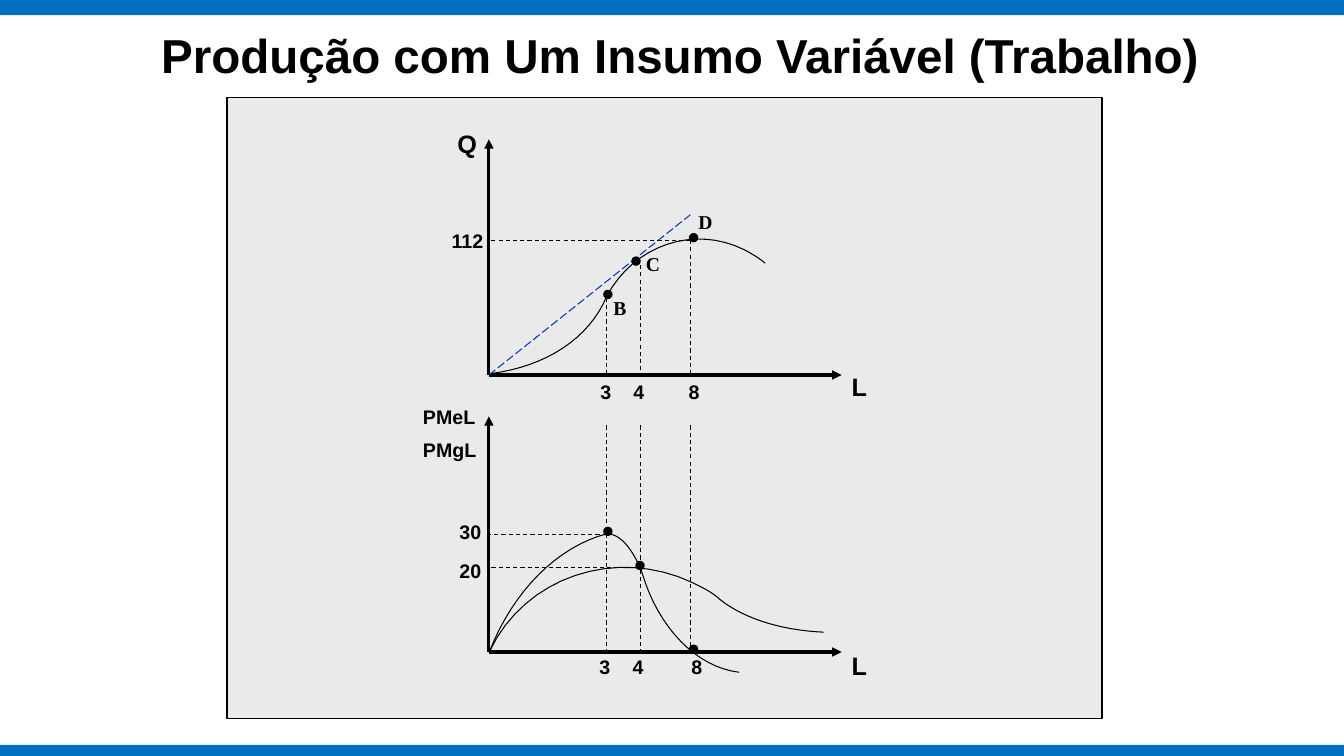
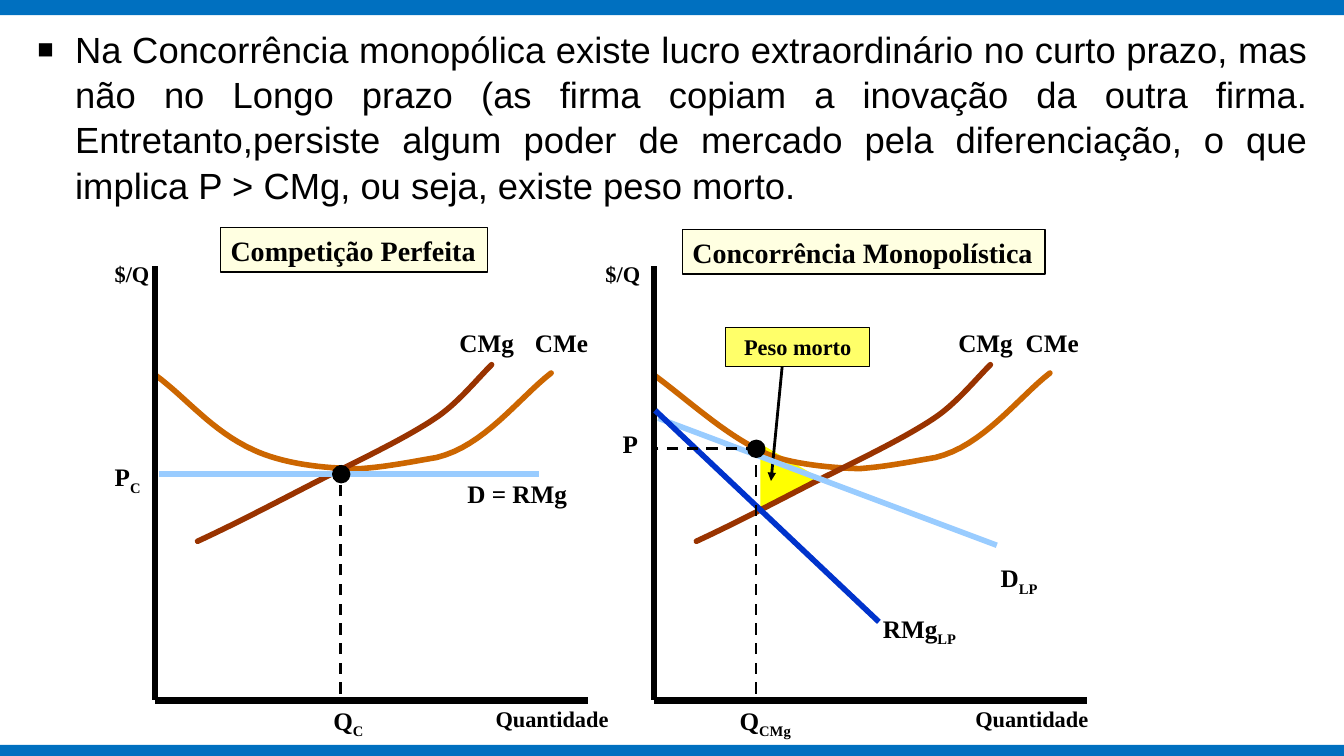
from dataclasses import dataclass
from typing import Optional

from lxml.etree import SubElement
from pptx import Presentation
from pptx.dml.color import RGBColor
from pptx.enum.dml import MSO_LINE
from pptx.enum.shapes import MSO_CONNECTOR, MSO_SHAPE
from pptx.enum.text import MSO_ANCHOR, MSO_AUTO_SIZE, PP_ALIGN
from pptx.oxml.ns import qn
from pptx.util import Cm, Pt

BLACK = RGBColor(0x00, 0x00, 0x00)
BAND_BLUE = RGBColor(0x00, 0x70, 0xC0)
PANEL_GREY = RGBColor(0xEA, 0xEA, 0xEA)
DEEP_BLUE = RGBColor(0x00, 0x33, 0xCC)
SKY_BLUE = RGBColor(0x99, 0xCC, 0xFF)
ORANGE = RGBColor(0xCC, 0x66, 0x00)
BROWN = RGBColor(0x99, 0x33, 0x00)
YELLOW = RGBColor(0xFF, 0xFF, 0x00)
NOTE_YELLOW = RGBColor(0xFF, 0xFF, 0x69)
CREAM = RGBColor(0xFF, 0xFF, 0xE1)
SANS, SERIF = "Arial", "Times New Roman"
WIDTH, HEIGHT = 33.87, 19.05

Point = tuple[float, float]
Area = tuple[float, float, float, float]

TOTAL_PRODUCT = [(12.32, 9.42), (13.77, 9.25), (14.86, 8.51), (15.29, 7.47), (15.98, 6.17),
                 (17.5, 5.66), (18.77, 6.3), (18.95, 6.4), (19.13, 6.5), (19.28, 6.63)]
MARGINAL_PRODUCT = [(12.34, 16.41), (12.95, 14.86), (14.07, 13.77), (15.3, 13.45), (15.62, 13.46),
                    (15.93, 13.79), (16.18, 14.43), (16.59, 15.82), (17.55, 16.81), (18.62, 16.94)]
AVERAGE_PRODUCT = [(12.34, 16.41), (13.23, 14.53), (15.52, 13.77), (17.45, 14.68), (17.65, 14.78),
                   (17.86, 14.88), (18.03, 15.01), (18.62, 15.54), (19.61, 15.88), (20.75, 15.93)]
MARGINAL_COST = [(1.07, 13.64), (2.18, 13.13), (3.45, 12.45), (4.32, 12.01), (5.23, 11.56),
                 (6.38, 11), (7.06, 10.54), (7.59, 10.19), (8.03, 9.65), (8.48, 9.19)]
AVERAGE_COST_END = [(5.18, 11.81), (5.87, 11.76), (6.5, 11.63), (7.09, 11.53),
                    (8.28, 11.25), (9.17, 10.03), (9.98, 9.4)]


@dataclass(frozen=True)
class Label:
    """A short text placed by its top left corner."""
    text: str
    left: float
    top: float
    width: float
    size: float = 18
    subscript: str = ""


@dataclass(frozen=True)
class Market:
    """One cost diagram, with curves measured from its vertical axis."""
    axis: float
    heading: str
    heading_area: Area
    cost_start: list[Point]
    average_left: float
    unit_left: float
    quantity_left: float


MARKETS = [
    Market(3.91, "Competição Perfeita", (5.56, 5.74, 6.73, 1.12),
           [(0.03, 9.47), (0.79, 10.03), (1.42, 10.85), (2.46, 11.33), (3.2, 11.68), (4.22, 11.81)],
           9.32, 2.64, 12.24),
    Market(16.48, "Concorrência Monopolística", (17.2, 5.79, 9.14, 1.12),
           [(0.03, 9.47), (0.79, 10.03), (1.8, 10.95), (2.67, 11.35), (3.2, 11.66), (4.34, 11.79)],
           9.12, 15.01, 24.33),
]


def write_text(para, text: str, *, size: float, font: str = SERIF, bold: bool = True,
               subscript: bool = False) -> None:
    """Add a formatted span to a paragraph."""
    span = para.add_run()
    span.text = text
    span.font.name = font
    span.font.size = Pt(size)
    span.font.bold = bold
    span.font.color.rgb = BLACK
    if subscript:
        span._r.get_or_add_rPr().set("baseline", "-25000")


def add_label(page, label: Label, *, font: str = SERIF, wrap: bool = False, align=PP_ALIGN.LEFT) -> None:
    """Place a label in a box as tall as its single line."""
    box = page.shapes.add_textbox(Cm(label.left), Cm(label.top), Cm(label.width),
                                  Pt(label.size * 1.2) + Cm(0.25))
    box.text_frame.word_wrap = wrap
    para = box.text_frame.paragraphs[0]
    para.alignment = align
    write_text(para, label.text, size=label.size, font=font)
    if label.subscript:
        write_text(para, label.subscript, size=label.size, font=font, subscript=True)


def add_box(page, area: Area, fill: RGBColor, *, kind=MSO_SHAPE.RECTANGLE,
            outline: Optional[float] = None):
    """Draw a filled preset shape with an optional black outline."""
    box = page.shapes.add_shape(kind, *(Cm(length) for length in area))
    box.shadow.inherit = False
    box.fill.solid()
    box.fill.fore_color.rgb = fill
    if outline is None:
        box.line.fill.background()
    else:
        box.line.color.rgb = BLACK
        box.line.width = Pt(outline)
    return box


def add_note(page, text: str, area: Area, fill: RGBColor, size: float, align=PP_ALIGN.LEFT) -> None:
    """Draw an outlined rectangle holding one line of text."""
    box = add_box(page, area, fill, outline=1)
    box.text_frame.word_wrap = False
    para = box.text_frame.paragraphs[0]
    para.alignment = align
    write_text(para, text, size=size)


def add_dot(page, center: Point, size: float, outline: float) -> None:
    """Draw a black dot around its centre."""
    x, y = center
    add_box(page, (x - size / 2, y - size / 2, size, size), BLACK, kind=MSO_SHAPE.OVAL, outline=outline)


def add_line(page, start: Point, end: Point, width: float, *, color: RGBColor = BLACK,
             dash=None, arrow: bool = False) -> None:
    """Draw a straight line, dashed or arrowed on request."""
    line = page.shapes.add_connector(MSO_CONNECTOR.STRAIGHT, *(Cm(length) for length in start + end))
    line.line.color.rgb = color
    line.line.width = Pt(width)
    if dash is not None:
        line.line.dash_style = dash
    properties = line.element.spPr
    if arrow:
        SubElement(properties.find(qn("a:ln")), qn("a:tailEnd"), type="triangle")
    SubElement(properties, qn("a:effectLst"))


def bezier_points(nodes: list[Point], steps: int = 16) -> list[Point]:
    """Sample a chain of cubic segments that share their end nodes."""
    points = [nodes[0]]
    for first in range(0, len(nodes) - 1, 3):
        segment = nodes[first:first + 4]
        for step in range(1, steps + 1):
            t = step / steps
            weights = ((1 - t) ** 3, 3 * t * (1 - t) ** 2, 3 * t * t * (1 - t), t ** 3)
            points.append((sum(w * x for w, (x, _) in zip(weights, segment)),
                           sum(w * y for w, (_, y) in zip(weights, segment))))
    return points


def add_curve(page, nodes: list[Point], width: float, *, color: RGBColor = BLACK,
              shift: float = 0) -> None:
    """Draw an open smooth curve through cubic nodes."""
    points = [(Cm(x + shift), Cm(y)) for x, y in bezier_points(nodes)]
    builder = page.shapes.build_freeform(*points[0])
    builder.add_line_segments(points[1:], close=False)
    curve = builder.convert_to_shape()
    curve.shadow.inherit = False
    curve.fill.background()
    curve.line.color.rgb = color
    curve.line.width = Pt(width)
    curve.element.spPr.find(qn("a:ln")).set("cap", "rnd")


def place(holder, area: Area) -> None:
    """Move a placeholder and keep its text at full size."""
    holder.left, holder.top, holder.width, holder.height = (Cm(length) for length in area)
    holder.text_frame.auto_size = MSO_AUTO_SIZE.NONE


def add_master_bands(deck, page) -> None:
    """Put the two blue bands on the slide master."""
    tree = deck.slide_master.element.cSld.spTree
    for top, height in ((0, 0.38), (18.77, 0.28)):
        tree.insert(2, add_box(page, (0, top, WIDTH, height), BAND_BLUE).element)


def draw_production(page) -> None:
    """Draw total product above average and marginal product."""
    title = page.shapes.title
    place(title, (2.11, 0.05, 28.37, 2.16))
    title.text_frame.vertical_anchor = MSO_ANCHOR.BOTTOM
    para = title.text_frame.paragraphs[0]
    para.alignment = PP_ALIGN.RIGHT
    write_text(para, "Produção com Um Insumo Variável (Trabalho)", size=34, font=SANS)

    add_box(page, (5.72, 2.46, 22.05, 15.65), PANEL_GREY, outline=1)
    axis, right = 12.32, 21.21
    for base in (9.45, 16.43):
        add_line(page, (axis, base), (axis, base - 5.94), 2.25, arrow=True)
        add_line(page, (axis, base), (right, base), 2.25, arrow=True)
    for nodes in (TOTAL_PRODUCT, MARGINAL_PRODUCT, AVERAGE_PRODUCT):
        add_curve(page, nodes, 0.75)
    add_line(page, (axis, 9.45), (17.4, 5.41), 0.75, color=DEEP_BLUE, dash=MSO_LINE.LONG_DASH)

    for x, top in ((15.29, 7.32), (16.13, 6.68), (17.4, 6.05)):
        add_line(page, (x, top), (x, 9.45), 0.75, dash=MSO_LINE.DASH)
        add_line(page, (x, 10.72), (x, 16.43), 0.75, dash=MSO_LINE.DASH)
    for x, y in ((17.4, 6.05), (15.29, 13.46), (16.13, 14.3)):
        add_line(page, (x, y), (axis, y), 0.75, dash=MSO_LINE.DASH)
    for center in ((16.03, 6.58), (15.32, 7.42), (17.48, 5.99),
                   (15.32, 13.39), (16.13, 14.25), (17.48, 16.36)):
        add_dot(page, center, 0.21, 0.75)

    for label in (Label("Q", 11.28, 3.1, 1.27), Label("L", right, 9.22, 1.27),
                  Label("L", right, 16.26, 1.27), Label("PMeL", 10.41, 10.08, 1.95, 14),
                  Label("PMgL", 10.41, 10.92, 1.95, 14), Label("112", 11.13, 5.64, 1.4, 14),
                  Label("30", 11.33, 12.98, 1.14, 14), Label("20", 11.33, 13.97, 1.14, 14)):
        add_label(page, label, font=SANS, wrap=True)
    for top, centers in ((9.45, (15.27, 16.1, 17.49)), (16.38, (15.24, 16.08, 17.56))):
        for text, center in zip("348", centers):
            add_label(page, Label(text, center - 0.45, top, 0.9, 14), font=SANS, wrap=True,
                      align=PP_ALIGN.CENTER)
    for text, left, top in (("B", 15.21, 7.34), ("D", 17.35, 5.16), ("C", 16.03, 6.22)):
        add_label(page, Label(text, left, top, 0.9, 14), wrap=True)


def draw_market(page, market: Market) -> None:
    """Draw the axes, cost curves and captions of one market."""
    axis, base = market.axis, 17.65
    add_curve(page, market.cost_start + AVERAGE_COST_END, 4, color=ORANGE, shift=axis)
    add_curve(page, MARGINAL_COST, 4, color=BROWN, shift=axis)
    add_line(page, (axis, 6.71), (axis, 17.63), 4.5)
    add_line(page, (axis, base), (axis + 10.92, base), 4.5)
    for label in (Label("CMg", axis + 7.42, 8.13, 1.88),
                  Label("CMe", axis + market.average_left, 8.13, 1.85),
                  Label("$/Q", market.unit_left, 6.43, 1.42, 16),
                  Label("Quantidade", market.quantity_left, base, 3.61, 16)):
        add_label(page, label)
    add_note(page, market.heading, market.heading_area, CREAM, 20)


def draw_competition(page) -> None:
    """Compare perfect competition with monopolistic competition."""
    title = page.shapes.title
    title.element.getparent().remove(title.element)
    body = page.placeholders[1]
    place(body, (0.69, 0.5, 32.56, 4.8))
    para = body.text_frame.paragraphs[0]
    para.alignment = PP_ALIGN.JUSTIFY
    para.line_spacing = 1.04
    para.space_before = Pt(13)
    write_text(para, "Na Concorrência monopólica existe lucro extraordinário no curto prazo, mas não no "
               "Longo prazo (as firma copiam a inovação da outra firma. Entretanto,persiste algum poder "
               "de mercado pela diferenciação, o que implica P > CMg, ou seja, existe peso morto.",
               size=26, font=SANS, bold=False)
    properties = para._p.get_or_add_pPr()
    properties.set("marL", str(Cm(0.95)))
    properties.set("indent", str(-Cm(0.95)))
    SubElement(properties, qn("a:buSzPct"), val="75000")
    SubElement(properties, qn("a:buFont"), typeface=SANS)
    SubElement(properties, qn("a:buChar"), char="■")

    loss = add_box(page, (19.05, 11.3, 1.7, 1.47), YELLOW, kind=MSO_SHAPE.ISOSCELES_TRIANGLE)
    loss.rotation = 90
    for market in MARKETS:
        draw_market(page, market)
    add_note(page, "Peso morto", (18.29, 8.26, 3.63, 0.97), NOTE_YELLOW, 16, PP_ALIGN.CENTER)
    add_line(page, (19.71, 9.25), (19.43, 12.12), 2, arrow=True)

    for start, end, color in (((4.01, 11.94), (13.59, 11.94), SKY_BLUE),
                              ((16.59, 10.54), (25.12, 13.74), SKY_BLUE),
                              ((16.51, 10.34), (22.15, 15.67), DEEP_BLUE)):
        add_line(page, start, end, 4, color=color)
    for start, end in (((8.59, 17.48), (8.59, 11.71)), ((19.05, 17.48), (19.05, 11.28)),
                       ((19.08, 11.3), (16.48, 11.3))):
        add_line(page, start, end, 2, dash=MSO_LINE.DASH)
    for center in ((8.6, 11.95), (19.06, 11.31)):
        add_dot(page, center, 0.43, 1)
    for label in (Label("D = RMg", 11.53, 11.94, 3.05), Label("Q", 8.15, 17.65, 1.3, subscript="C"),
                  Label("P", 2.64, 11.51, 1.22, subscript="C"),
                  Label("D", 24.97, 14.05, 1.5, subscript="LP"),
                  Label("RMg", 22, 15.32, 2.41, subscript="LP"),
                  Label("Q", 18.39, 17.65, 1.91, subscript="CMg"), Label("P", 15.44, 10.67, 0.91)):
        add_label(page, label)


def main() -> None:
    """Build and save the deck."""
    deck = Presentation()
    deck.slide_width, deck.slide_height = Cm(WIDTH), Cm(HEIGHT)
    production = deck.slides.add_slide(deck.slide_layouts.get_by_name("Title Only"))
    add_master_bands(deck, production)
    draw_production(production)
    draw_competition(deck.slides.add_slide(deck.slide_layouts.get_by_name("Title and Content")))
    deck.save("out.pptx")


if __name__ == "__main__":
    main()
